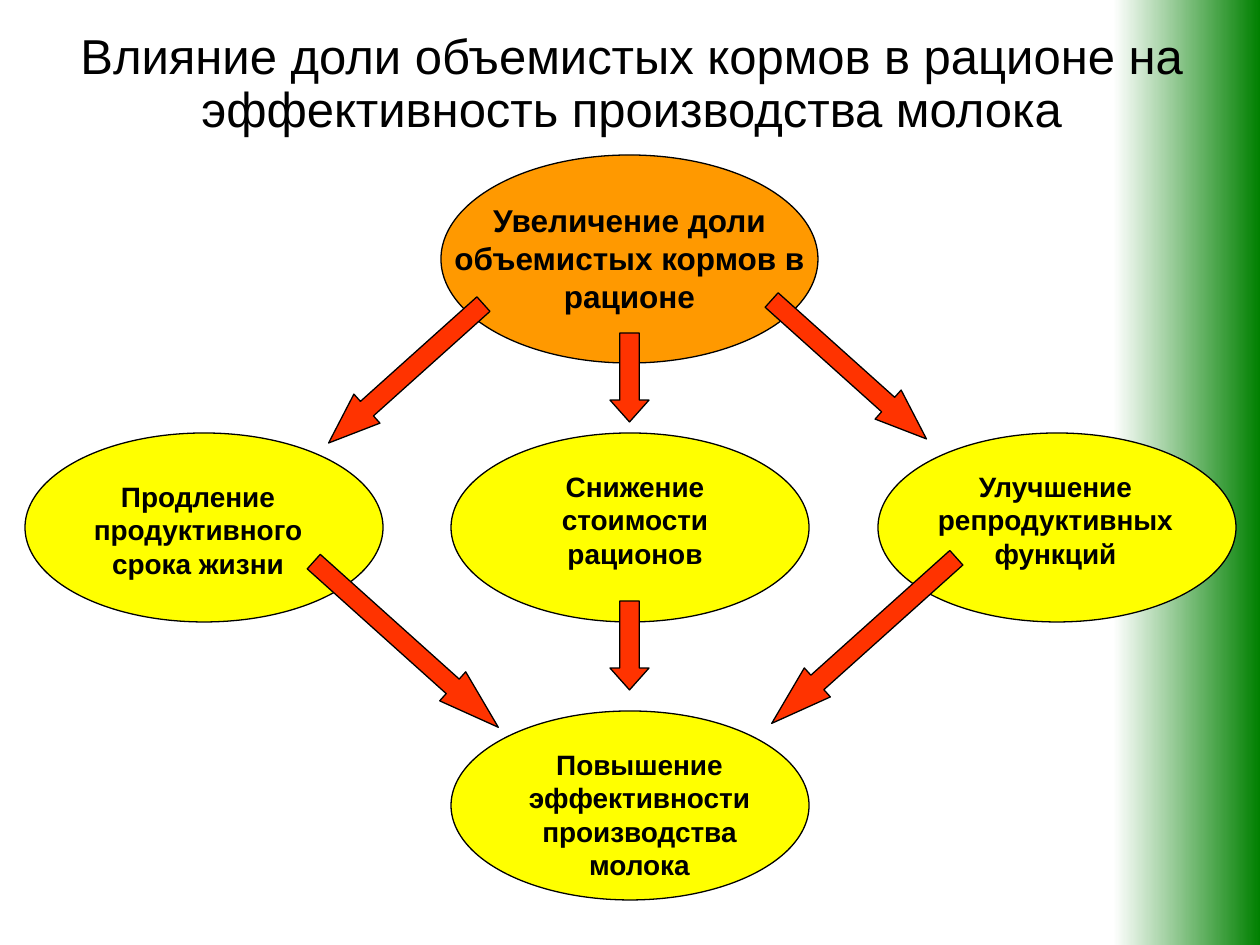
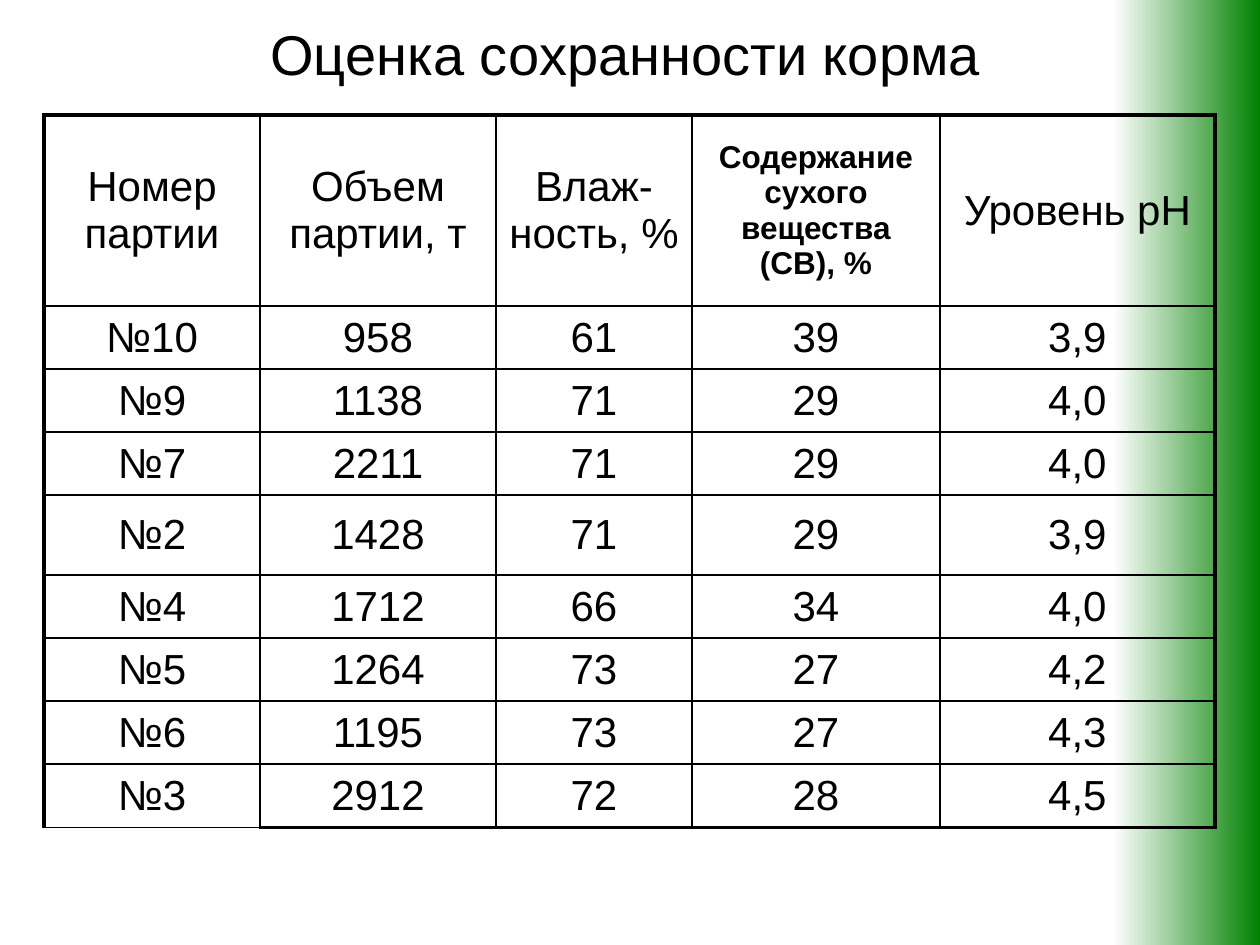
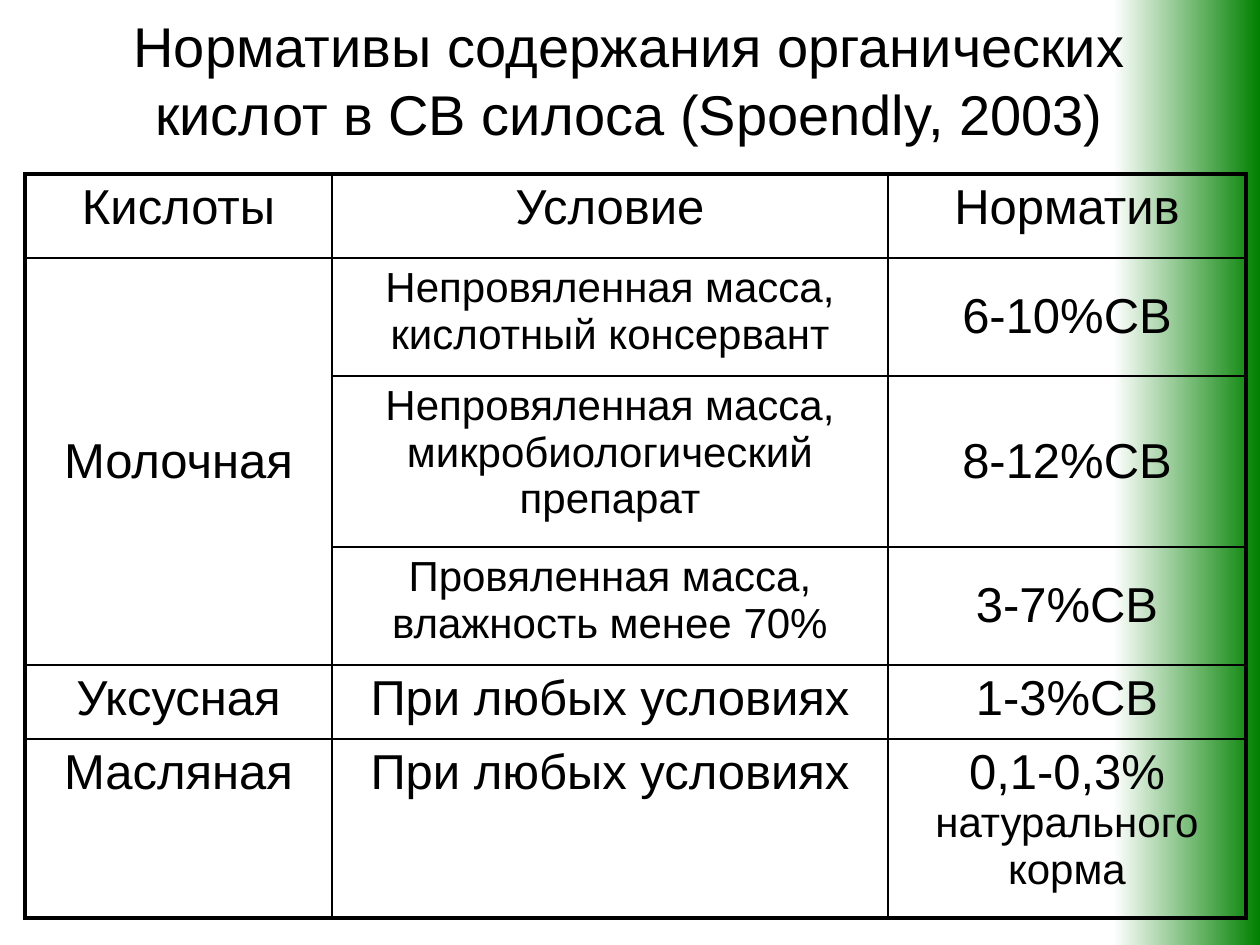
from dataclasses import dataclass
from typing import NamedTuple

from lxml.etree import SubElement
from pptx import Presentation
from pptx.dml.color import RGBColor
from pptx.enum.shapes import MSO_SHAPE
from pptx.enum.text import MSO_ANCHOR, PP_ALIGN
from pptx.oxml.ns import qn
from pptx.util import Emu, Pt

FONT = "Arial"
COLORS = {
    "black": "000000",
    "white": "FFFFFF",
    "green": "008000",
    "orange": "FF9900",
    "yellow": "FFFF00",
    "red": "FF3300",
}
WIDE, HIGH = 1260, 945
THIN, THICK = 1, 2.25


class Box(NamedTuple):
    left: int
    top: int
    width: int
    height: int


class Run(NamedTuple):
    text: str
    size: int


@dataclass
class Node:
    oval: Box
    label: Box
    text: str
    fill: str = "yellow"
    size: int = 16


@dataclass
class Arrow:
    box: Box
    turn: float
    head: float


@dataclass
class Cell:
    runs: list[Run]
    bold: bool = False
    mid: bool = True


# Shared helpers
def px(count: int) -> Emu:
    return Emu(round(count * 914400 / 126))


def place(box: Box) -> list[Emu]:
    return [px(side) for side in box]


def color(name: str) -> RGBColor:
    return RGBColor.from_string(COLORS[name])


def write(frame, *runs: Run, bold: bool = False, space: float | None = None) -> None:
    para = frame.paragraphs[0]
    para.alignment = PP_ALIGN.CENTER
    if space:
        para.line_spacing = space
    for item in runs:
        run = para.add_run()
        run.text = item.text
        font = run.font
        font.name, font.size, font.bold = FONT, Pt(item.size), bold
        font.color.rgb = color("black")


def add_text(slide, box: Box, text: str, *, size: int, bold: bool = False,
             mid: bool = False, space: float | None = None) -> None:
    frame = slide.shapes.add_textbox(*place(box)).text_frame
    frame.word_wrap = True
    frame.vertical_anchor = MSO_ANCHOR.MIDDLE if mid else MSO_ANCHOR.TOP
    write(frame, Run(text, size), bold=bold, space=space)


def add_shape(slide, kind: MSO_SHAPE, box: Box, fill: str):
    shape = slide.shapes.add_shape(kind, *place(box))
    shape.shadow.inherit = False
    shape.fill.solid()
    shape.fill.fore_color.rgb = color(fill)
    shape.line.color.rgb = color("black")
    shape.line.width = Pt(0.75)
    return shape


def add_slide(deck):
    """Start a slide with the green band at its right edge."""
    slide = deck.slides.add_slide(deck.slide_layouts[6])
    band = add_shape(slide, MSO_SHAPE.RECTANGLE, Box(1113, 0, 147, HIGH), "green")
    band.line.fill.background()
    band.fill.gradient()
    band.fill.gradient_angle = 0
    for stop, name, spot in zip(band.fill.gradient_stops, ("white", "green"), (0, 1)):
        stop.color.rgb = color(name)
        stop.position = spot
    return slide


# Diagram parts
def add_node(slide, node: Node) -> None:
    add_shape(slide, MSO_SHAPE.OVAL, node.oval, node.fill)
    add_text(slide, node.label, node.text, size=node.size, bold=True)


def add_arrow(slide, arrow: Arrow) -> None:
    shape = add_shape(slide, MSO_SHAPE.RIGHT_ARROW, arrow.box, "red")
    shape.rotation = arrow.turn
    shape.adjustments[0] = 0.5
    shape.adjustments[1] = arrow.head


# Table parts
def add_edge(cell, side: str, width: float) -> None:
    props = cell._tc.get_or_add_tcPr()
    line = SubElement(props, qn(f"a:ln{side}"), w=str(Pt(width)))
    fill = SubElement(line, qn("a:solidFill"))
    SubElement(fill, qn("a:srgbClr"), val=COLORS["black"])


def add_table(slide, left: int, top: int, cols: list[int], rows: list[int],
              cells: dict[tuple[int, int], Cell], open_foot: bool = False):
    box = Box(left, top, sum(cols), sum(rows))
    table = slide.shapes.add_table(len(rows), len(cols), *place(box)).table
    table.first_row = table.horz_banding = False
    for col, width in zip(table.columns, cols):
        col.width = px(width)
    for row, height in zip(table.rows, rows):
        row.height = px(height)
    for r in range(len(rows)):
        for c in range(len(cols)):
            cell = table.cell(r, c)
            foot = r == len(rows) - 1 and not (open_foot and c == 0)
            outer = {"L": c == 0, "R": c == len(cols) - 1, "T": r == 0, "B": foot}
            for side, thick in outer.items():
                add_edge(cell, side, THICK if thick else THIN)
            cell.fill.background()
            item = cells.get((r, c))
            if item:
                cell.vertical_anchor = MSO_ANCHOR.MIDDLE if item.mid else MSO_ANCHOR.TOP
                write(cell.text_frame, *item.runs, bold=item.bold)
    return table


# Slide 1: effect of the feed share
def feed_slide(deck) -> None:
    slide = add_slide(deck)
    oval = (358, 189)
    nodes = [
        Node(Box(441, 155, 377, 208), Box(441, 195, 377, 126),
             "Увеличение доли объемистых кормов в рационе", "orange", 18),
        Node(Box(25, 433, *oval), Box(74, 473, 248, 113),
             "Продление продуктивного срока жизни"),
        Node(Box(451, 433, *oval), Box(501, 463, 268, 113),
             "Снижение стоимости рационов"),
        Node(Box(878, 433, *oval), Box(917, 463, 277, 113),
             "Улучшение репродуктивных функций"),
        Node(Box(451, 711, *oval), Box(501, 741, 277, 147),
             "Повышение эффективности производства молока"),
    ]
    for node in nodes:
        add_node(slide, node)

    add_text(slide, Box(54, 26, 1155, 118),
             "Влияние доли объемистых кормов в рационе на "
             "эффективность производства молока", size=28, space=0.9)

    right, down, left = 41.9, 90, 138.1
    short, mid, long = (89, 39), (208, 39), (248, 39)
    arrows = [
        Arrow(Box(302, 354, *mid), left, 1.32),
        Arrow(Box(585, 358, *short), down, 0.56),
        Arrow(Box(745, 350, *mid), right, 1.32),
        Arrow(Box(282, 625, *long), right, 1.57),
        Arrow(Box(585, 626, *short), down, 0.56),
        Arrow(Box(740, 621, *long), left, 1.57),
    ]
    for arrow in arrows:
        add_arrow(slide, arrow)


# Slide 2: state of the stored feed
def store_slide(deck) -> None:
    slide = add_slide(deck)
    add_text(slide, Box(25, 0, 1201, 106), "Оценка сохранности корма", size=32, mid=True)
    rows = [
        ("Номер партии", "Объем партии, т", "Влаж-ность, %",
         "Содержание сухого вещества (СВ), %", "Уровень рН"),
        ("№10", "958", "61", "39", "3,9"),
        ("№9", "1138", "71", "29", "4,0"),
        ("№7", "2211", "71", "29", "4,0"),
        ("№2", "1428", "71", "29", "3,9"),
        ("№4", "1712", "66", "34", "4,0"),
        ("№5", "1264", "73", "27", "4,2"),
        ("№6", "1195", "73", "27", "4,3"),
        ("№3", "2912", "72", "28", "4,5"),
    ]
    cells = {(r, c): Cell([Run(text, 24)])
             for r, row in enumerate(rows) for c, text in enumerate(row)}
    cells[0, 3] = Cell([Run(rows[0][3], 18)], bold=True)
    add_table(slide, 44, 115, [216, 236, 196, 248, 275],
              [191, 60, 60, 59, 80, 60, 59, 60, 59], cells, open_foot=True)


# Slide 3: norms for acids
def acid_slide(deck) -> None:
    slide = add_slide(deck)
    add_text(slide, Box(94, 0, 1071, 158),
             "Нормативы содержания органических кислот в СВ силоса (Spoendly, 2003)",
             size=32, mid=True)
    rows = [
        ("Кислоты", "Условие", "Норматив"),
        ("Молочная", "Непровяленная масса, кислотный консервант", "6-10%СВ"),
        ("", "Непровяленная масса, микробиологический препарат", "8-12%СВ"),
        ("", "Провяленная масса, влажность менее 70%", "3-7%СВ"),
        ("Уксусная", "При любых условиях", "1-3%СВ"),
        ("Масляная", "При любых условиях", "0,1-0,3% "),
    ]
    milk = range(1, 4)
    cells = {(r, c): Cell([Run(text, 24 if r in milk and c == 1 else 28)],
                          mid=r in milk and c != 1)
             for r, row in enumerate(rows) for c, text in enumerate(row) if text}
    cells[5, 2].runs.append(Run("натурального корма", 24))
    table = add_table(slide, 25, 174, [307, 556, 358],
                      [84, 118, 171, 118, 74, 179], cells)
    table.cell(milk[0], 0).merge(table.cell(milk[-1], 0))


def main() -> None:
    deck = Presentation()
    deck.slide_width, deck.slide_height = px(WIDE), px(HIGH)
    for build in (feed_slide, store_slide, acid_slide):
        build(deck)
    deck.save("out.pptx")


if __name__ == "__main__":
    main()
